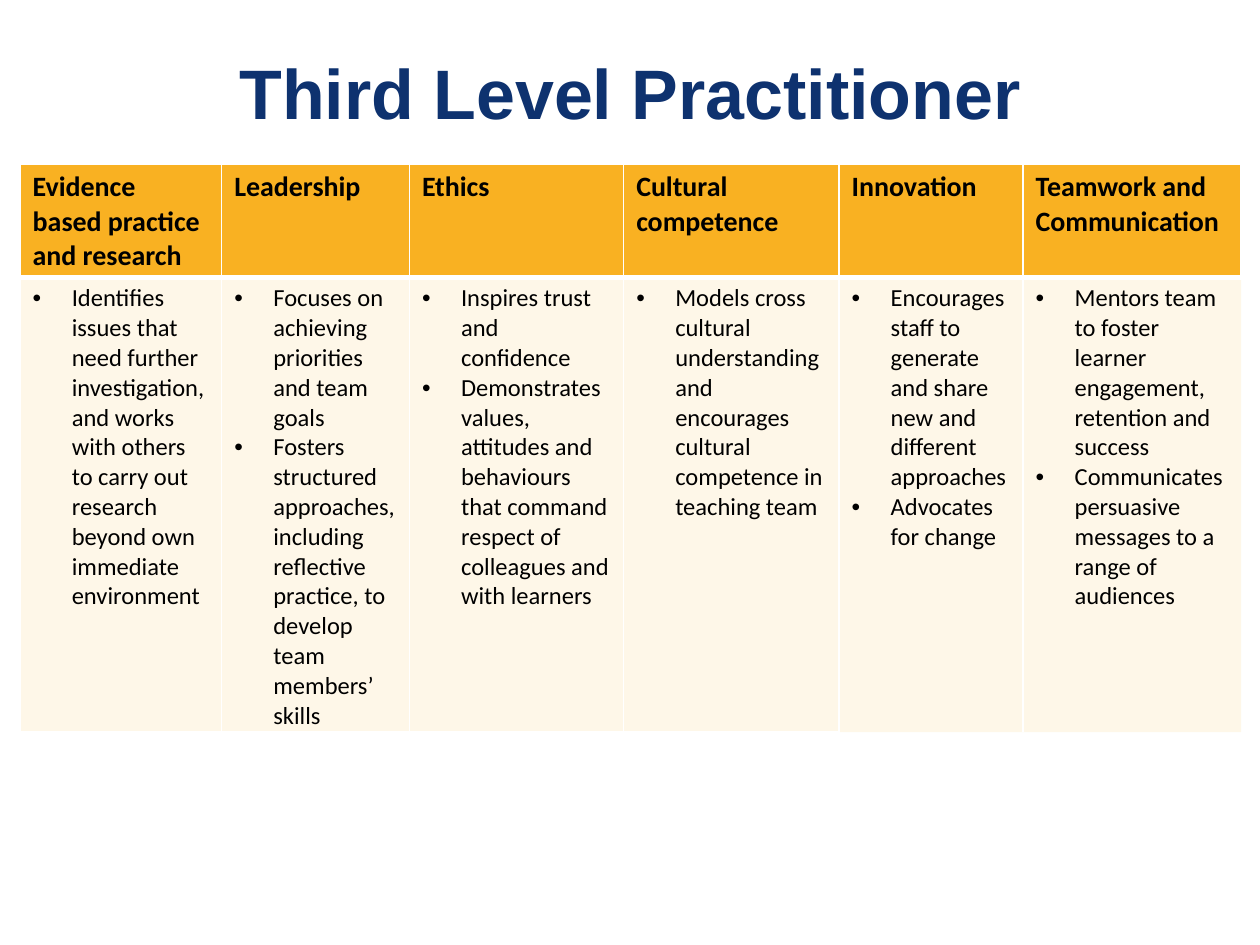
from dataclasses import dataclass

from lxml import etree
from pptx import Presentation
from pptx import util as u
from pptx.dml import color
from pptx.enum import text
from pptx.oxml import ns

NAVY, AMBER, WHITE, BLACK = "0E326F", "F9B122", "FFFFFF", "000000"
NO_GRID_STYLE = "{2D5ABB26-0587-4C30-8999-92F81FD0307C}"
INDENT = u.Inches(0.31)


@dataclass
class Competency:
    name: str
    width: float
    points: list[str]
    borders: str = "LRTB"


COMPETENCIES = [
    Competency("Evidence based practice and research", 1.6, [
        "Identifies issues that need further investigation, and works with "
        "others to carry out research beyond own immediate environment"]),
    Competency("Leadership", 1.49, [
        "Focuses on achieving priorities and team goals",
        "Fosters structured approaches, including reflective practice, "
        "to develop team members’ skills"]),
    Competency("Ethics", 1.7, [
        "Inspires trust and confidence",
        "Demonstrates values, attitudes and behaviours that command respect "
        "of colleagues and with learners"]),
    Competency("Cultural competence", 1.71, [
        "Models cross cultural understanding and encourages cultural "
        "competence in teaching team"]),
    Competency("Innovation", 1.46, [
        "Encourages staff to generate and share new and different approaches",
        "Advocates for change"], "LT"),
    Competency("Teamwork and Communication", 1.73, [
        "Mentors team to foster learner engagement, retention and success",
        "Communicates persuasive messages to a range of audiences"], "T"),
]


def rgb(value: str) -> color.RGBColor:
    return color.RGBColor.from_string(value)


def add_run(paragraph, content: str, size: float, font: str, value: str, bold: bool) -> None:
    run = paragraph.add_run()
    run.text = content
    run.font.size = u.Pt(size)
    run.font.name = font
    run.font.bold = bold
    run.font.color.rgb = rgb(value)


def add_border(cell, side: str, points: float) -> None:
    properties = cell._tc.get_or_add_tcPr()
    line = etree.SubElement(properties, ns.qn(f"a:ln{side}"), w=str(u.Pt(points)))
    fill = etree.SubElement(line, ns.qn("a:solidFill"))
    etree.SubElement(fill, ns.qn("a:srgbClr"), val=WHITE)


def fill_cell(cell, opacity: int) -> None:
    cell.fill.solid()
    cell.fill.fore_color.rgb = rgb(AMBER)
    if opacity < 100:
        shade = cell._tc.tcPr.find(ns.qn("a:solidFill"))[0]
        etree.SubElement(shade, ns.qn("a:alpha"), val=str(opacity * 1000))


def add_bullet(paragraph) -> None:
    properties = paragraph._p.get_or_add_pPr()
    properties.set("marL", str(INDENT))
    properties.set("indent", str(-INDENT))
    etree.SubElement(properties, ns.qn("a:buFont"), typeface="Arial")
    etree.SubElement(properties, ns.qn("a:buChar"), char="•")


def write_heading(cell, competency: Competency) -> None:
    for side in "LRTB":
        add_border(cell, side, 3 if side == "B" else 1)
    fill_cell(cell, 100)
    add_run(cell.text_frame.paragraphs[0], competency.name, 16, "Calibri", BLACK, True)


def write_points(cell, competency: Competency) -> None:
    for side in competency.borders:
        add_border(cell, side, 1)
    fill_cell(cell, 10)
    frame = cell.text_frame
    for index, point in enumerate(competency.points):
        paragraph = frame.add_paragraph() if index else frame.paragraphs[0]
        add_bullet(paragraph)
        add_run(paragraph, point, 14, "Calibri", BLACK, False)


def add_title(slide, content: str) -> None:
    shape = slide.shapes.add_textbox(
        u.Inches(0.5), u.Inches(0.3), u.Inches(9), u.Inches(0.85))
    frame = shape.text_frame
    frame.word_wrap = True
    frame.vertical_anchor = text.MSO_ANCHOR.MIDDLE
    paragraph = frame.paragraphs[0]
    paragraph.alignment = text.PP_ALIGN.CENTER
    add_run(paragraph, content, 40, "Arial", NAVY, True)


def add_competency_table(slide, competencies: list[Competency]) -> None:
    width = sum(competency.width for competency in competencies)
    table = slide.shapes.add_table(
        2, len(competencies), u.Inches(0.16), u.Inches(1.3),
        u.Inches(width), u.Inches(4.48)).table
    table.horz_banding = False
    table._tbl.tblPr.find(ns.qn("a:tableStyleId")).text = NO_GRID_STYLE
    for row, height in zip(table.rows, (0.87, 3.61)):
        row.height = u.Inches(height)
    for index, competency in enumerate(competencies):
        table.columns[index].width = u.Inches(competency.width)
        write_heading(table.cell(0, index), competency)
        write_points(table.cell(1, index), competency)


def main() -> None:
    presentation = Presentation()
    presentation.slide_width = u.Inches(10)
    presentation.slide_height = u.Inches(7.5)
    slide = presentation.slides.add_slide(presentation.slide_layouts[6])
    add_title(slide, "Third Level Practitioner")
    add_competency_table(slide, COMPETENCIES)
    presentation.save("out.pptx")


if __name__ == "__main__":
    main()
